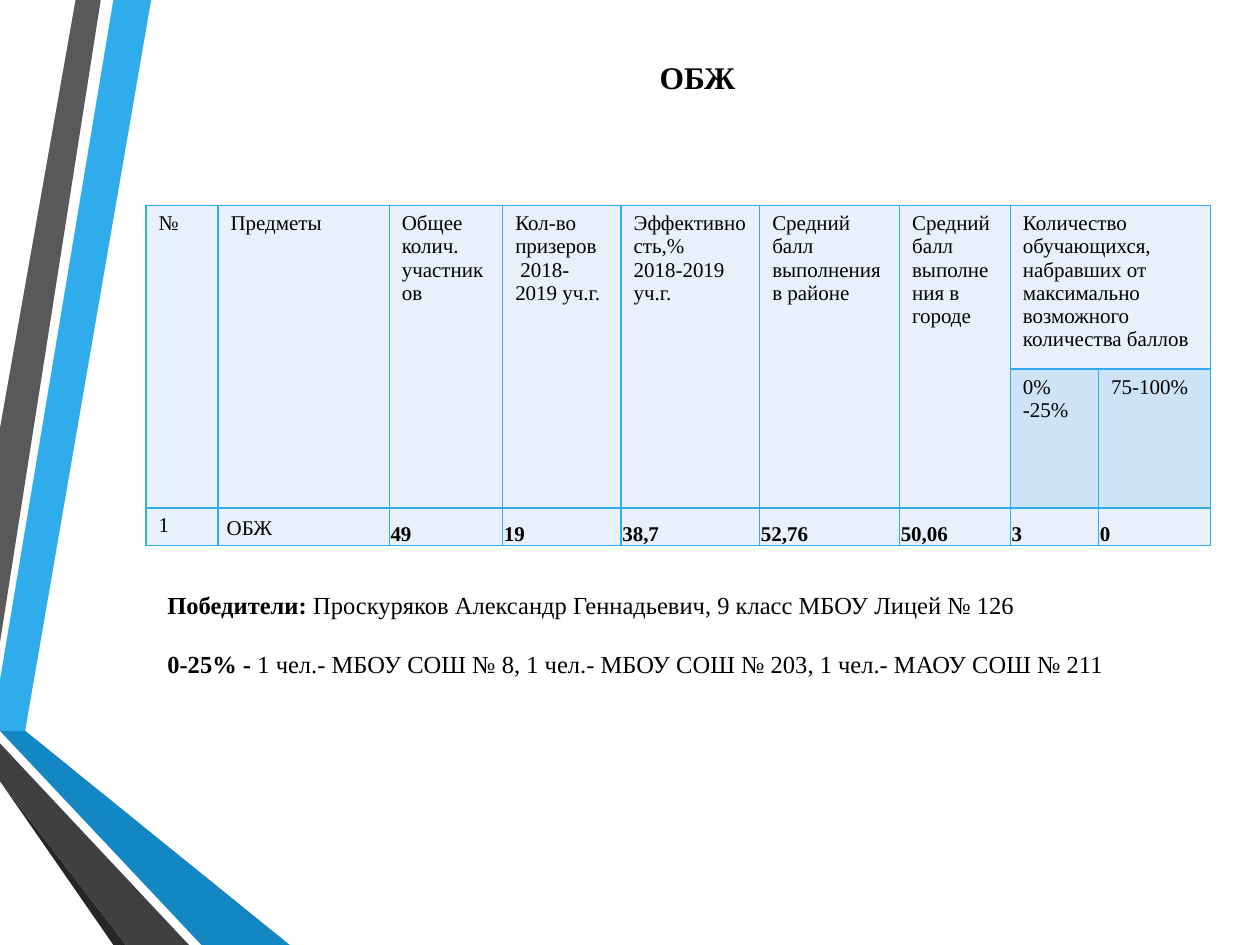
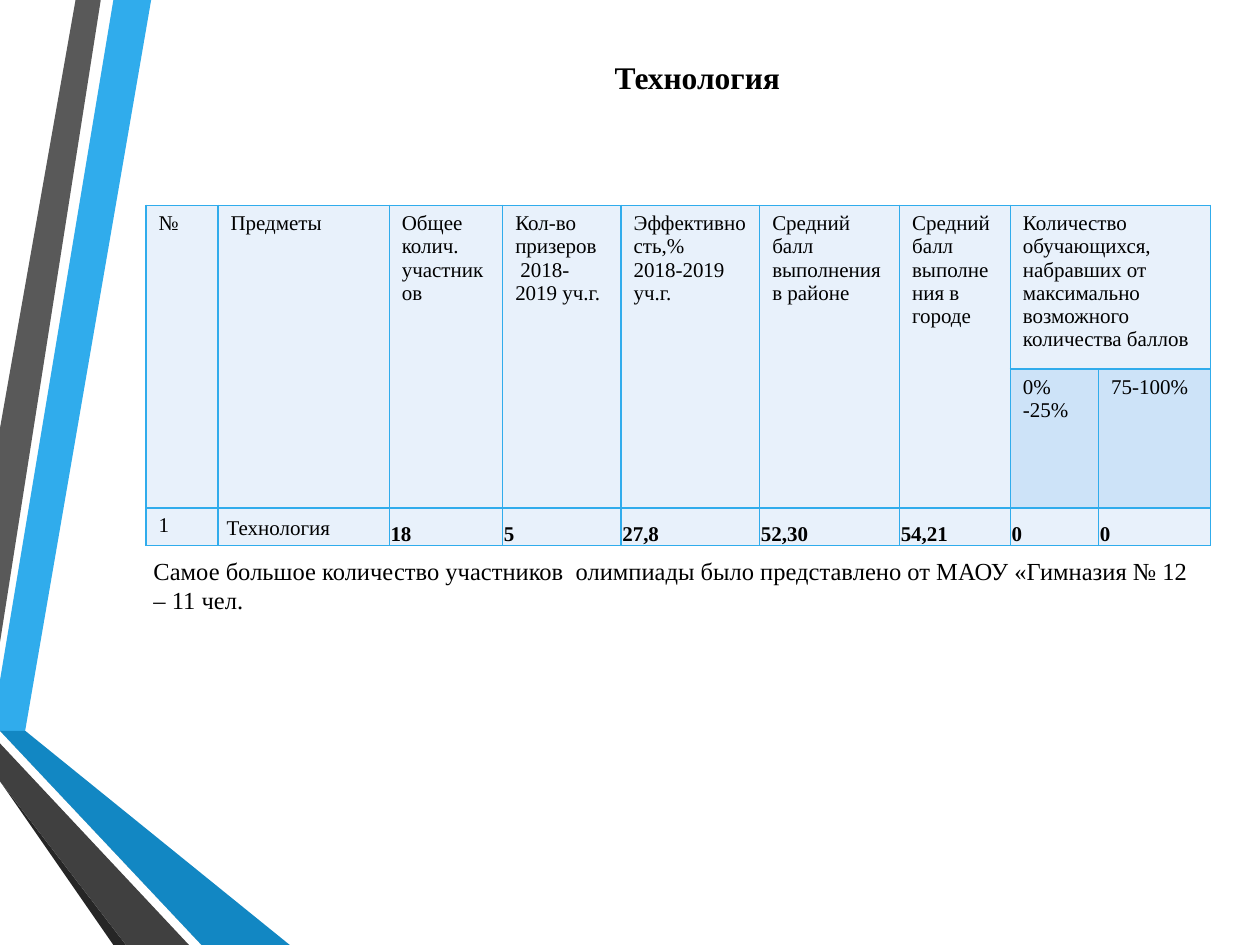
from lxml.etree import SubElement
from pptx import Presentation
from pptx.dml.color import RGBColor
from pptx.enum.text import MSO_ANCHOR, PP_ALIGN
from pptx.oxml.ns import qn
from pptx.util import Inches, Pt

COLUMNS, ROWS = 100, 75  # page grid
UNIT = Inches(10) // COLUMNS
FONT = "Times New Roman"
COLORS = {
    "sky": "30ACEC", "blue": "1287C3", "navy": "0C5A82",
    "gray": "595959", "dark": "404040", "coal": "262626",
    "text": "000000", "cell": "E8F1FB", "subhead": "CDE3F8",
}

RIBBONS = [
    ("sky", [(0, 54.4), (0, 57.5), (2.2, 57.9), (11.7, 0), (8.9, 0)]),
    ("gray", [(8.3, 0), (5.5, 0), (0, 33.6), (0, 50.6)]),
    ("coal", [(0, 61.9), (0, 62.1), (9.3, 75), (9.9, 75)]),
    ("navy", [(0, 57.9), (0, 58), (15.6, 75), (16.3, 75)]),
    ("blue", [(0, 57.9), (16.3, 75), (23.3, 75), (2.2, 57.9), (0, 57.5)]),
    ("dark", [(0, 61.9), (9.9, 75), (15.1, 75), (0, 58.6)]),
]

TABLE_LEFT, TABLE_TOP = 11.6, 16.3
COLUMN_WIDTHS = [5.7, 13.6, 9, 9.4, 11, 11.1, 8.8, 7, 8.9]
ROW_HEIGHTS = [13, 11, 3]
HEADINGS = [
    ["№"],
    ["Предметы"],
    ["Общее колич. участников"],
    ["Кол-во призеров", " 2018-2019 уч.г."],
    ["Эффективность,%", "2018-2019 уч.г."],
    ["Средний балл выполнения в районе"],
    ["Средний балл выполнения в городе"],
    ["Количество обучающихся, набравших от максимально возможного количества баллов"],
]
SCORE_BANDS = ["0% -25%", "75-100%"]

SUBJECTS = [
    {
        "name": "ОБЖ",
        "results": ["49", "19", "38,7", "52,76", "50,06", "3", "0"],
        "notes": [
            [("Победители: ", True),
             ("Проскуряков Александр Геннадьевич, 9 класс МБОУ Лицей № 126", False)],
            [("0-25% - ", True),
             ("1 чел.- МБОУ СОШ № 8, 1 чел.- МБОУ СОШ № 203, "
              "1 чел.- МАОУ СОШ № 211", False)],
        ],
        "notes_box": (12.3, 46.3, 84.7, 12.8),
    },
    {
        "name": "Технология",
        "results": ["18", "5", "27,8", "52,30", "54,21", "0", "0"],
        "notes": ["Самое большое количество участников  олимпиады было "
                  "представлено от МАОУ «Гимназия № 12 – 11 чел."],
        "notes_box": (11.2, 43.6, 84.6, 8.1),
    },
]


def grid(*lengths):
    return [round(length * UNIT) for length in lengths]


def rgb(name):
    return RGBColor.from_string(COLORS[name])


def write(frame, paragraphs, size=12, bold=False, align=None, line=None,
          gap=0, indent=0):
    """Fill a text frame; a paragraph is a string or a list of (text, bold)."""
    for index, content in enumerate(paragraphs):
        paragraph = frame.add_paragraph() if index else frame.paragraphs[0]
        paragraph.alignment = align
        paragraph.line_spacing = line
        if index and gap:
            paragraph.space_before = Pt(gap)
        if indent:
            paragraph._p.get_or_add_pPr().set("indent", str(grid(indent)[0]))
        runs = [(content, bold)] if isinstance(content, str) else content
        for text, strong in runs:
            run = paragraph.add_run()
            run.text = text
            run.font.name = FONT
            run.font.size = Pt(size)
            run.font.bold = strong
            run.font.color.rgb = rgb("text")


def add_text(slide, box, paragraphs, **formatting):
    frame = slide.shapes.add_textbox(*grid(*box)).text_frame
    frame.word_wrap = True
    write(frame, paragraphs, **formatting)


def add_ribbons(slide):
    for color, points in RIBBONS:
        outline = slide.shapes.build_freeform(*points[0], scale=UNIT)
        outline.add_line_segments(points[1:], close=True)
        ribbon = outline.convert_to_shape()
        ribbon.shadow.inherit = False
        ribbon.fill.solid()
        ribbon.fill.fore_color.rgb = rgb(color)
        ribbon.line.fill.background()


def style_cell(cell, fill):
    cell.fill.solid()
    cell.fill.fore_color.rgb = rgb(fill)
    properties = cell._tc.get_or_add_tcPr()
    for position, side in enumerate(("lnL", "lnR", "lnT", "lnB")):
        border = SubElement(properties, qn(f"a:{side}"), w=str(Pt(1)))
        solid = SubElement(border, qn("a:solidFill"))
        SubElement(solid, qn("a:srgbClr"), val=COLORS["sky"])
        properties.insert(position, border)


def set_insets(cell, anchor, side, top):
    cell.vertical_anchor = anchor
    cell.margin_left, cell.margin_right, cell.margin_top = grid(side, side, top)
    cell.margin_bottom = 0


def add_results_table(slide, subject, results):
    table = slide.shapes.add_table(
        len(ROW_HEIGHTS), len(COLUMN_WIDTHS),
        *grid(TABLE_LEFT, TABLE_TOP, sum(COLUMN_WIDTHS), sum(ROW_HEIGHTS))).table
    table.first_row = table.horz_banding = False
    for column, width in zip(table.columns, grid(*COLUMN_WIDTHS)):
        column.width = width
    for row, height in zip(table.rows, grid(*ROW_HEIGHTS)):
        row.height = height

    first_band = len(COLUMN_WIDTHS) - len(SCORE_BANDS)
    for row in range(len(ROW_HEIGHTS)):
        for column in range(len(COLUMN_WIDTHS)):
            is_band = row == 1 and column >= first_band
            style_cell(table.cell(row, column), "subhead" if is_band else "cell")

    for column, heading in enumerate(HEADINGS):
        cell = table.cell(0, column)
        if column < first_band:
            cell.merge(table.cell(1, column))
        else:
            cell.merge(table.cell(0, len(COLUMN_WIDTHS) - 1))
        write(cell.text_frame, heading)
    for column, band in enumerate(SCORE_BANDS, first_band):
        write(table.cell(1, column).text_frame, [band])

    write(table.cell(2, 0).text_frame, ["1"])
    subject_cell = table.cell(2, 1)
    set_insets(subject_cell, MSO_ANCHOR.MIDDLE, side=0.7, top=0)
    write(subject_cell.text_frame, [subject], line=1.15)
    for column, result in enumerate(results, 2):
        cell = table.cell(2, column)
        set_insets(cell, MSO_ANCHOR.BOTTOM, side=0.1, top=0.1)
        write(cell.text_frame, [result], bold=True)


def add_subject_slide(deck, name, results, notes, notes_box):
    slide = deck.slides.add_slide(deck.slide_layouts[6])
    add_ribbons(slide)
    add_text(slide, (27.9, 3.4, 50, 4.4), [name], size=18, bold=True,
             align=PP_ALIGN.CENTER, line=1.25, indent=4.9)
    add_results_table(slide, name, results)
    add_text(slide, notes_box, notes, size=14, gap=17)


def main():
    deck = Presentation()
    deck.slide_width, deck.slide_height = grid(COLUMNS, ROWS)
    for subject in SUBJECTS:
        add_subject_slide(deck, **subject)
    deck.save("out.pptx")


if __name__ == "__main__":
    main()
